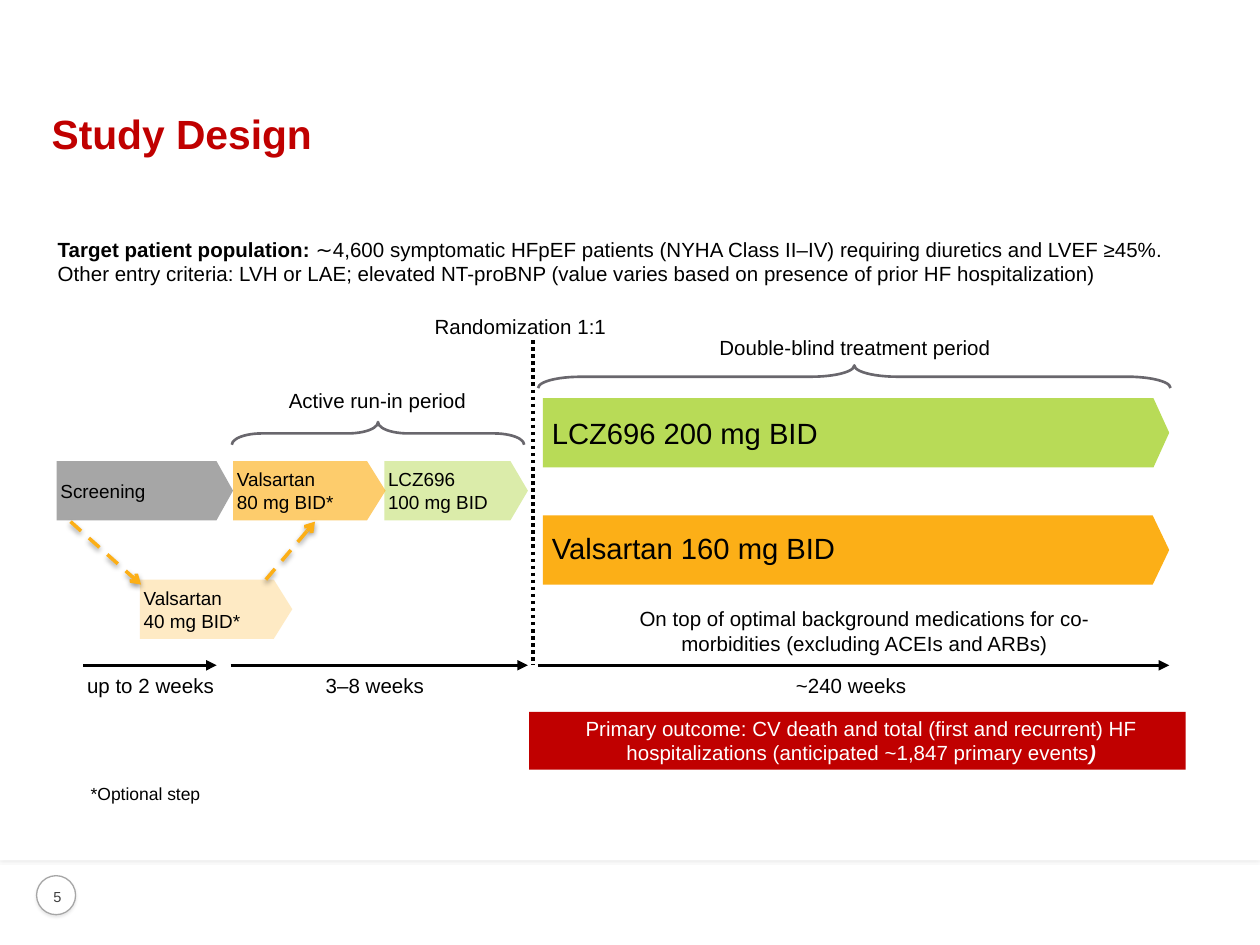
"""Build the Study Design slide: a trial timeline with run-in and treatment arms."""
from lxml.etree import SubElement
from pptx import Presentation
from pptx.dml.color import RGBColor
from pptx.enum.dml import MSO_LINE
from pptx.enum.shapes import MSO_CONNECTOR, MSO_SHAPE
from pptx.enum.text import MSO_ANCHOR, MSO_AUTO_SIZE, PP_ALIGN
from pptx.oxml.ns import qn
from pptx.util import Inches, Pt

COLORS = {
    "white": "FFFFFF", "black": "000000", "red": "C00000", "orange": "FCAF17",
    "cream": "FEDFA2", "green": "B8DB57", "pale_green": "DBECAA", "gray": "A6A6A6",
    "brace": "69676D", "home": "808080", "number": "404040", "soft": "474749",
}
FONT = "Arial"
WIDE, TIGHT, NONE = (0.1, 0.05, 0.1, 0.05), (0.13, 0.03, 0.07, 0.03), (0, 0, 0, 0)
LEFT, CENTER = PP_ALIGN.LEFT, PP_ALIGN.CENTER
STEP_TOP, STEP_HEIGHT, ARM_LEFT, ARM_WIDTH, ARM_HEIGHT = 3.66, 0.47, 4.31, 4.97, 0.55
AXIS_Y, DURATION_Y = 5.28, 5.34
SOFT_SHADOW, ARROW_SHADOW = ("soft", 12, 1.5, 1), ("black", 38, 3.1, 1.6)

TITLE = "Study Design"
POPULATION = [
    ("Target patient population: ", True, False),
    ("∼4,600 symptomatic HFpEF patients (NYHA Class II–IV) requiring diuretics and "
     "LVEF ≥45%. Other entry criteria: LVH or LAE; elevated NT-proBNP (value varies "
     "based on presence of prior HF hospitalization)", False, False),
]
OUTCOME = [
    ("Primary outcome: CV death and total (first and recurrent) HF hospitalizations "
     "(anticipated ~1,847 primary events", False, False),
    (")", True, True),
]
STEPS = [
    (["LCZ696", "100 mg BID"], 3.05, STEP_TOP, 1.14, 0.294, "pale_green", 100),
    (["Valsartan", "80 mg BID*"], 1.85, STEP_TOP, 1.21, 0.312, "orange", 63),
    (["Screening"], 0.45, STEP_TOP, 1.4, 0.279, "gray", 100),
    (["Valsartan", "40 mg BID*"], 1.11, 4.6, 1.21, 0.312, "cream", 63),
]
ARMS = [
    ("LCZ696 200 mg BID", 3.16, 0.227, "green", 1.0),
    ("Valsartan 160 mg BID", 4.09, 0.239, "orange", 0.9),
]
LABELS = [
    (POPULATION, (0.36, 1.83, 9.16, 0.69), WIDE, LEFT, 11.7),
    ("up to 2 weeks", (0.63, DURATION_Y, 1.13, 0.2), NONE, CENTER, 11.7),
    ("3–8 weeks", (2.57, DURATION_Y, 0.81, 0.2), NONE, CENTER, 11.7),
    ("~240 weeks", (4.34, DURATION_Y, 4.83, 0.2), NONE, CENTER, 11.7),
    ("On top of optimal background medications for co-morbidities (excluding ACEIs "
     "and ARBs)", (4.6, 4.78, 4.46, 0.46), TIGHT, CENTER, 11.7),
    ("Active run-in period", (1.77, 3.03, 2.45, 0.3), WIDE, CENTER, 11.7),
    ("Double-blind treatment period", (4.73, 2.61, 4.11, 0.3), WIDE, CENTER, 11.7),
    ("*Optional step", (0.64, 6.17, 7.83, 0.25), (0.08, 0.04, 0.08, 0.04), LEFT, 10),
    ("Randomization 1:1", (3.35, 2.44, 2.28, 0.3), WIDE, LEFT, 11.7),
]
BRACES = [((2.91, 2.28, 0.18, 2.32), 1.322), ((6.69, 0.48, 0.18, 5.02), 1.885)]
PERIODS = [(0.66, 1.72), (1.83, 4.19), (4.27, 9.28)]
DETOURS = [((0.56, 4.14), (1.12, 4.64)), ((2.11, 4.6), (2.5, 4.14))]
HOME = [(0.88, 6.93), (1.06, 7.09), (1, 7.09), (1, 7.25), (0.92, 7.25), (0.92, 7.15),
        (0.85, 7.15), (0.85, 7.25), (0.77, 7.25), (0.77, 7.09), (0.7, 7.09)]


def rgb(name):
    return RGBColor.from_string(COLORS[name])


def set_shadow(part, color, alpha, blur, distance):
    properties = part._element.spPr
    effects = properties.find(qn("a:effectLst"))
    if effects is None:
        effects = SubElement(properties, qn("a:effectLst"))
    shadow = SubElement(effects, qn("a:outerShdw"), blurRad=str(Pt(blur)),
                        dist=str(Pt(distance)), dir="5400000", rotWithShape="0")
    tint = SubElement(shadow, qn("a:srgbClr"), val=COLORS[color])
    SubElement(tint, qn("a:alpha"), val=str(alpha * 1000))


def paint(part, fill=None, line=None, width=0.75, alpha=100):
    part.shadow.inherit = False
    if fill:
        part.fill.solid()
        part.fill.fore_color.rgb = rgb(fill)
        if alpha < 100:
            tint = part._element.spPr.find(qn("a:solidFill"))[0]
            SubElement(tint, qn("a:alpha"), val=str(alpha * 1000))
    else:
        part.fill.background()
    if line:
        part.line.color.rgb = rgb(line)
        part.line.width = Pt(width)
    else:
        part.line.fill.background()


def add_preset(slide, preset, box, **style):
    part = slide.shapes.add_shape(preset, *map(Inches, box))
    paint(part, **style)
    return part


def write(part, paragraphs, size, color="black", align=LEFT, insets=WIDE,
          anchor=MSO_ANCHOR.TOP, spacing=None):
    frame = part.text_frame
    frame.word_wrap = True
    frame.auto_size = MSO_AUTO_SIZE.NONE
    frame.vertical_anchor = anchor
    (frame.margin_left, frame.margin_top,
     frame.margin_right, frame.margin_bottom) = map(Inches, insets)
    for index, content in enumerate(paragraphs):
        paragraph = frame.add_paragraph() if index else frame.paragraphs[0]
        paragraph.alignment = align
        paragraph.line_spacing = spacing
        paragraph.font.name = FONT
        paragraph.font.size = Pt(size)
        paragraph.font.color.rgb = rgb(color)
        if isinstance(content, str):
            paragraph.add_run().text = content
            continue
        for words, bold, italic in content:
            run = paragraph.add_run()
            run.text = words
            run.font.bold, run.font.italic = bold, italic


def add_line(slide, start, end, color="black", dash=None, head=None, shadow=None):
    line = slide.shapes.add_connector(MSO_CONNECTOR.STRAIGHT, *map(Inches, start + end))
    line.line.color.rgb = rgb(color)
    line.line.width = Pt(2)
    if dash:
        line.line.dash_style = dash
    if head:
        SubElement(line.line._get_or_add_ln(), qn("a:tailEnd"), type=head)
    SubElement(line._element.spPr, qn("a:effectLst"))
    if shadow:
        set_shadow(line, *shadow)


def add_footer(slide):
    page = add_preset(slide, MSO_SHAPE.RECTANGLE, (0, 0, 10, 6.83), fill="white")
    set_shadow(page, "black", 12, 1.5, 1)
    badge = add_preset(slide, MSO_SHAPE.OVAL, (0.29, 6.95, 0.31, 0.31),
                       fill="white", line="gray")
    set_shadow(badge, *SOFT_SHADOW)
    number = slide.shapes.add_textbox(*map(Inches, (0.35, 7.05, 0.21, 0.13)))
    write(number, ["5"], 8.3, "number", CENTER, NONE, MSO_ANCHOR.MIDDLE, Pt(10))
    builder = slide.shapes.build_freeform(*HOME[0], scale=Inches(1))
    builder.add_line_segments(HOME[1:], close=True)
    home = builder.convert_to_shape()
    paint(home, line="home")
    set_shadow(home, *SOFT_SHADOW)


def main():
    deck = Presentation()
    deck.slide_width, deck.slide_height = Inches(10), Inches(7.5)
    slide = deck.slides.add_slide(deck.slide_layouts[5])
    add_footer(slide)

    title = slide.shapes.title
    title.left, title.top, title.width, title.height = map(Inches, (0.31, 0.84, 9.69, 0.46))
    write(title, [TITLE], 23.3, "red", spacing=0.95)
    title.text_frame.paragraphs[0].font.bold = True
    slide.shapes._spTree.append(title._element)

    add_line(slide, (4.23, 2.7), (4.23, AXIS_Y), dash=MSO_LINE.ROUND_DOT)
    for name, top, point, color, spacing in ARMS:
        arm = add_preset(slide, MSO_SHAPE.PENTAGON,
                         (ARM_LEFT, top, ARM_WIDTH, ARM_HEIGHT), fill=color)
        arm.adjustments[0] = point
        write(arm, [name], 16.7, insets=(0.07, 0, 0.07, 0),
              anchor=MSO_ANCHOR.MIDDLE, spacing=spacing)
    for lines, left, top, width, point, color, alpha in STEPS:
        step = add_preset(slide, MSO_SHAPE.PENTAGON, (left, top, width, STEP_HEIGHT),
                          fill=color, alpha=alpha)
        step.adjustments[0] = point
        write(step, lines, 10.8, insets=(0.03, 0, 0.07, 0), anchor=MSO_ANCHOR.MIDDLE)
    outcome = add_preset(slide, MSO_SHAPE.RECTANGLE, (4.2, 5.65, 5.21, 0.46), fill="red")
    write(outcome, [OUTCOME], 11.7, "white", CENTER, TIGHT)
    for box, curl in BRACES:
        brace = add_preset(slide, MSO_SHAPE.LEFT_BRACE, box, line="brace", width=1.5)
        brace.rotation = 90
        brace.adjustments[0] = curl
    for words, box, insets, align, size in LABELS:
        label = slide.shapes.add_textbox(*map(Inches, box))
        write(label, [words], size, align=align, insets=insets)
    for start, end in PERIODS:
        add_line(slide, (start, AXIS_Y), (end, AXIS_Y), head="triangle")
    for start, end in DETOURS:
        add_line(slide, start, end, "orange", MSO_LINE.DASH, "arrow", ARROW_SHADOW)
    deck.save("out.pptx")


if __name__ == "__main__":
    main()
